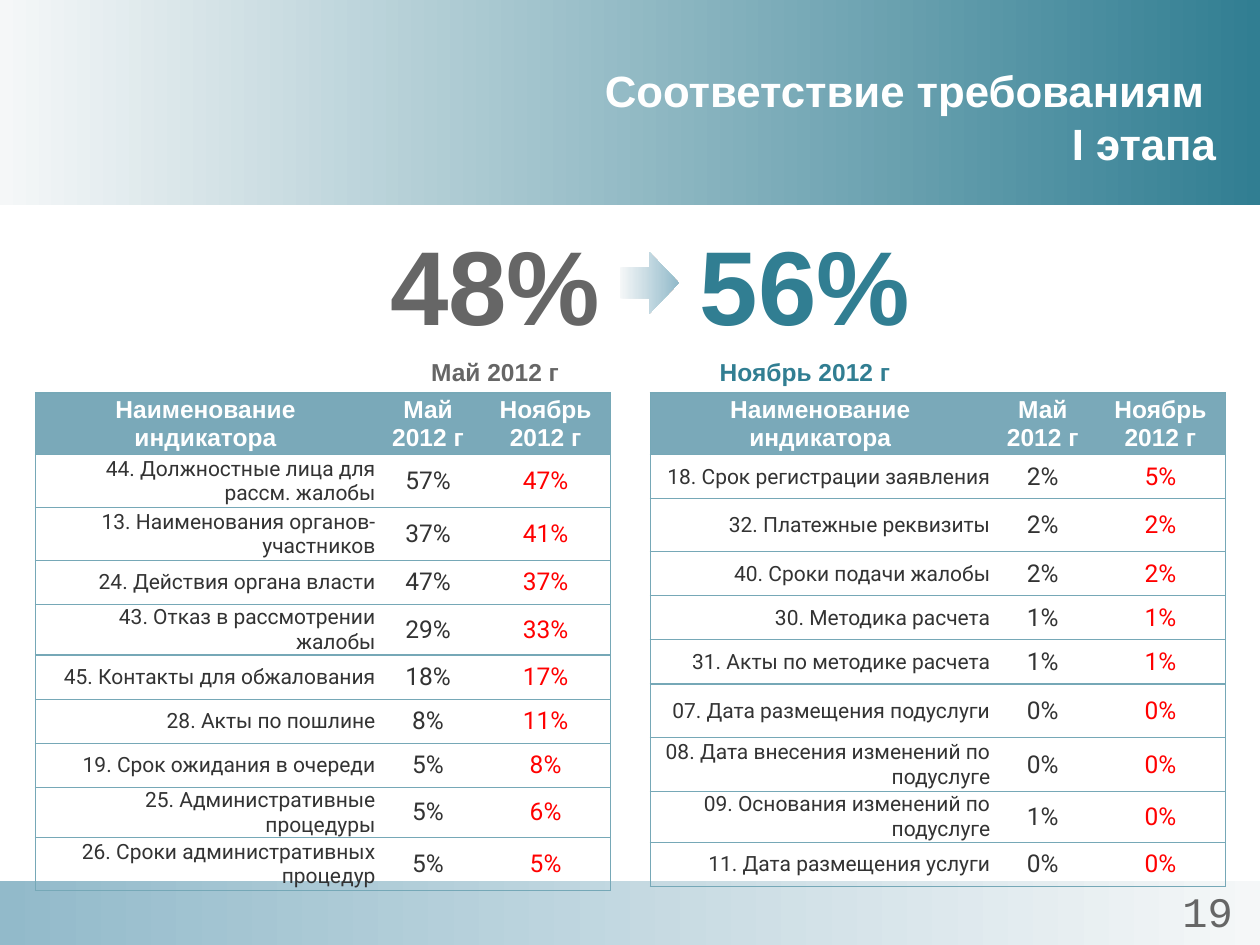
from lxml.etree import SubElement
from pptx import Presentation
from pptx.dml.color import RGBColor
from pptx.enum.shapes import MSO_SHAPE
from pptx.enum.text import MSO_ANCHOR, MSO_AUTO_SIZE, PP_ALIGN
from pptx.oxml import parse_xml
from pptx.oxml.ns import nsdecls, qn
from pptx.util import Pt

TITLE = ["Соответствие требованиям ", "I этапа"]
PAGE_NUMBER = "19"
MAY, NOVEMBER = "Май 2012 г", "Ноябрь 2012 г"
TOTALS = [("48%", MAY, "may", 184.3), ("56%", NOVEMBER, "november", 361.4)]
HEADINGS = ("Наименование индикатора", MAY, NOVEMBER)

# Each row: indicator, May, November, row height
LEFT_INDICATORS = [
    ("44. Должностные лица для рассм. жалобы", "57%", "47%", 30.2),
    ("13. Наименования органов-участников", "37%", "41%", 30.2),
    ("24. Действия органа власти", "47%", "37%", 25.2),
    ("43. Отказ в рассмотрении жалобы", "29%", "33%", 25.2),
    ("45. Контакты для обжалования", "18%", "17%", 25.2),
    ("28. Акты по пошлине", "8%", "11%", 25.2),
    ("19. Срок ожидания в очереди", "5%", "8%", 25.2),
    ("25. Административные процедуры", "5%", "6%", 25.2),
    ("26. Сроки административных процедур", "5%", "5%", 30.2),
]
RIGHT_INDICATORS = [
    ("18. Срок регистрации заявления", "2%", "5%", 25.2),
    ("32. Платежные реквизиты", "2%", "2%", 30.2),
    ("40. Сроки подачи жалобы", "2%", "2%", 25.2),
    ("30. Методика расчета", "1%", "1%", 25.2),
    ("31. Акты по методике расчета", "1%", "1%", 25.2),
    ("07. Дата размещения подуслуги", "0%", "0%", 30.8),
    ("08. Дата внесения изменений по подуслуге", "0%", "0%", 30.8),
    ("09. Основания изменений по подуслуге", "1%", "0%", 25.2),
    ("11. Дата размещения услуги", "0%", "0%", 25.2),
]
TABLES = [(20.2, LEFT_INDICATORS), (371.5, RIGHT_INDICATORS)]
TABLE_TOP, HEADING_HEIGHT = 224.6, 35.3
COLUMN_WIDTHS = (194.4, 60, 74.4)

THEME = {
    "pale": "F5F7F8", "teal": "317E92", "sky": "92BACA",
    "heading_fill": "7AA9B9", "border": "76A8B7", "border_width": 0.75,
    "title": dict(name="Arial", size=25, bold=True, color="FFFFFF"),
    "heading": dict(name="Arial", size=14, bold=True, color="FFFFFF"),
    "may": dict(name="Arial", size=60, bold=True, color="666666"),
    "november": dict(name="Arial", size=60, bold=True, color="317E92"),
    "period_size": 14,
    "page": dict(name="Courier New", size=24, bold=False, color="666666"),
    "indicator": dict(name="Roboto", size=12, bold=False, color="333333"),
    "value": dict(name="Roboto", size=14, bold=False, color="333333"),
    "latest": dict(name="Roboto", size=14, bold=False, color="FF0000"),
}
COLUMN_STYLES = [("indicator", PP_ALIGN.RIGHT), ("value", PP_ALIGN.CENTER),
                 ("latest", PP_ALIGN.CENTER)]
WIDTH, HEIGHT = 720, 540


def points(*lengths):
    return [Pt(length) for length in lengths]


def set_all(target, formats):
    for attribute, value in formats.items():
        setattr(target, attribute, value)


def write(paragraph, text, style, align, **overrides):
    look = {**style, **overrides}
    run = paragraph.add_run()
    run.text = text
    paragraph.alignment = align
    set_all(run.font, dict(name=look["name"], size=Pt(look["size"]), bold=look["bold"]))
    run.font.color.rgb = RGBColor.from_string(look["color"])


def add_gradient_shape(slide, preset, box, start, end):
    shape = slide.shapes.add_shape(preset, *points(*box))
    shape.shadow.inherit = False
    shape.line.fill.background()
    shape.fill.gradient()
    shape.fill.gradient_angle = 0
    for stop, color in zip(shape.fill.gradient_stops, (start, end)):
        stop.color.rgb = RGBColor.from_string(THEME[color])


def add_text(slide, box):
    frame = slide.shapes.add_textbox(*points(*box)).text_frame
    frame.word_wrap = True
    return frame


def set_borders(cell, visible):
    """Draw the named sides and clear the others; lines precede the cell fill."""
    properties = cell._tc.get_or_add_tcPr()
    for position, side in enumerate("LRTB"):
        line = parse_xml(f'<a:ln{side} {nsdecls("a")} w="{Pt(THEME["border_width"])}"/>')
        if side in visible:
            fill = SubElement(line, qn("a:solidFill"))
            SubElement(fill, qn("a:srgbClr"), val=THEME["border"])
        else:
            SubElement(line, qn("a:noFill"))
        properties.insert(position, line)


def format_cell(cell, text, style, align, inset, sides):
    set_all(cell, dict(vertical_anchor=MSO_ANCHOR.MIDDLE, margin_left=Pt(inset),
                       margin_right=Pt(inset), margin_top=0, margin_bottom=0))
    write(cell.text_frame.paragraphs[0], text, THEME[style], align)
    if style == "heading":
        cell.fill.solid()
        cell.fill.fore_color.rgb = RGBColor.from_string(THEME["heading_fill"])
    else:
        cell.fill.background()
    set_borders(cell, sides)


def add_indicators(slide, left, indicators):
    heights = [HEADING_HEIGHT] + [row[-1] for row in indicators]
    table = slide.shapes.add_table(
        len(heights), len(COLUMN_WIDTHS),
        *points(left, TABLE_TOP, sum(COLUMN_WIDTHS), sum(heights))).table
    table.horz_banding = False
    for column, width in zip(table.columns, COLUMN_WIDTHS):
        column.width = Pt(width)
    for row, height in zip(table.rows, heights):
        row.height = Pt(height)
    outer_sides = ("LTB", "TB", "RTB")
    for column, heading in enumerate(HEADINGS):
        format_cell(table.cell(0, column), heading, "heading", PP_ALIGN.CENTER,
                    5.76, outer_sides[column])
    for row, (*texts, _) in enumerate(indicators, 1):
        for column, (text, (style, align)) in enumerate(zip(texts, COLUMN_STYLES)):
            format_cell(table.cell(row, column), text, style, align, 0,
                        outer_sides[column])


def add_title(slide):
    title = slide.shapes.title
    slide.shapes._spTree.append(title._element)  # in front of the header band
    set_all(title, dict(zip(("left", "top", "width", "height"),
                            points(274.3, 21.6, 427, 90))))
    frame = title.text_frame
    set_all(frame, dict(auto_size=MSO_AUTO_SIZE.NONE, word_wrap=True,
                        vertical_anchor=MSO_ANCHOR.MIDDLE,
                        margin_left=Pt(6.5), margin_right=Pt(6.5)))
    for text, paragraph in zip(TITLE, (frame.paragraphs[0], frame.add_paragraph())):
        write(paragraph, text, THEME["title"], PP_ALIGN.RIGHT)


def add_total(slide, percent, period, style, left):
    frame = add_text(slide, (left, 116.6, 197.3, 90.7))
    frame.margin_top = Pt(9.6)
    sizes = (THEME[style]["size"], THEME["period_size"])
    paragraphs = (frame.paragraphs[0], frame.add_paragraph())
    for paragraph, text, size in zip(paragraphs, (percent, period), sizes):
        write(paragraph, text, THEME[style], PP_ALIGN.CENTER, size=size)
        paragraph.space_after = Pt(6)


def main():
    deck = Presentation()
    deck.slide_width, deck.slide_height = points(WIDTH, HEIGHT)
    slide = deck.slides.add_slide(deck.slide_layouts[5])
    add_gradient_shape(slide, MSO_SHAPE.RECTANGLE, (0, 0, WIDTH, 117.4), "pale", "teal")
    add_gradient_shape(slide, MSO_SHAPE.RECTANGLE, (0, 503.5, WIDTH, 36.5), "sky", "pale")
    add_title(slide)
    for total in TOTALS:
        add_total(slide, *total)
    add_gradient_shape(slide, MSO_SHAPE.RIGHT_ARROW, (354.2, 144, 33.8, 35.3), "pale", "sky")
    page = add_text(slide, (660.2, 502.6, 59.8, 37.4))
    write(page.paragraphs[0], PAGE_NUMBER, THEME["page"], PP_ALIGN.CENTER)
    for left, indicators in TABLES:
        add_indicators(slide, left, indicators)
    deck.save("out.pptx")


if __name__ == "__main__":
    main()
